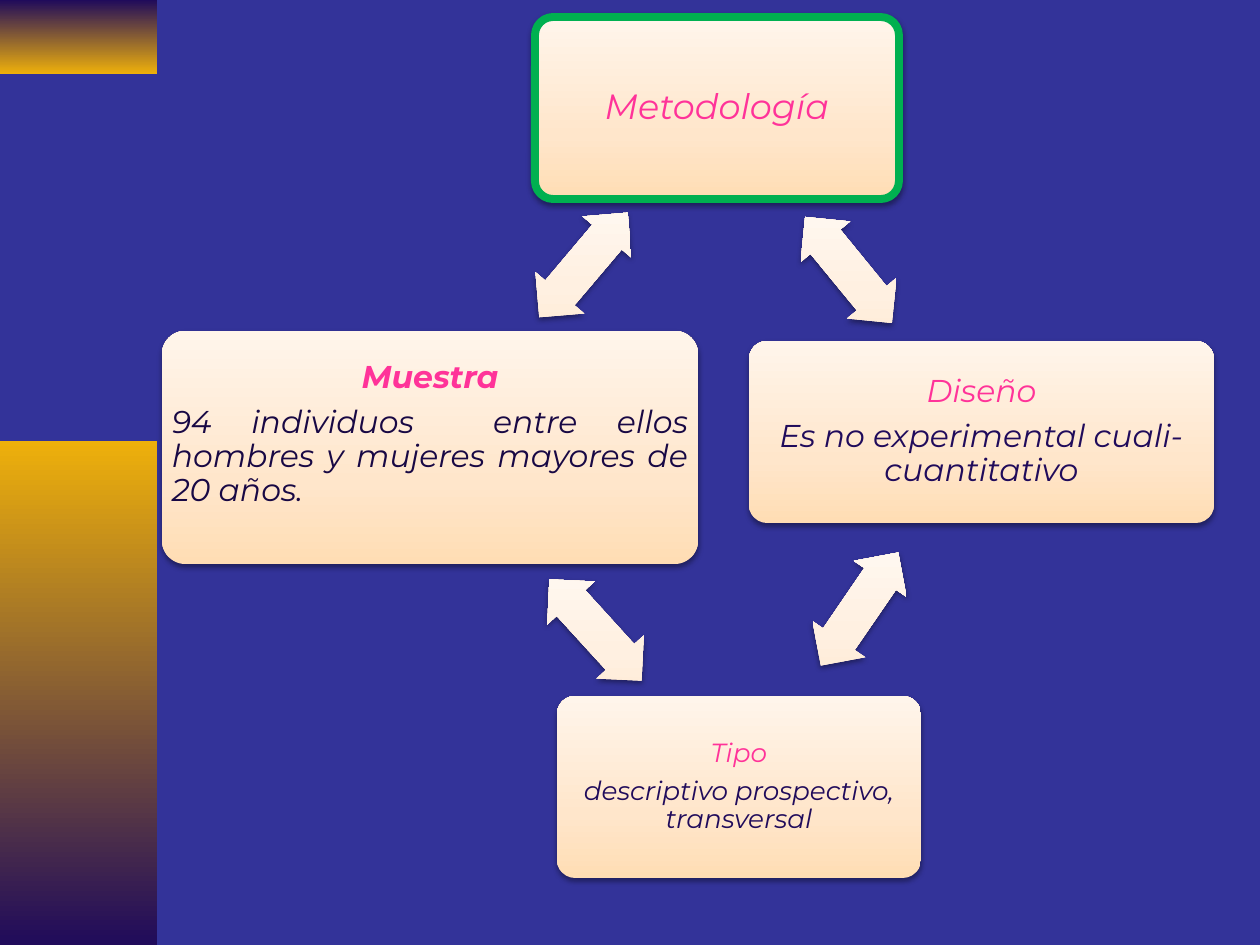
from lxml.etree import SubElement
from pptx import Presentation
from pptx.dml.color import RGBColor
from pptx.enum.shapes import MSO_SHAPE
from pptx.enum.text import MSO_ANCHOR, MSO_AUTO_SIZE, PP_ALIGN
from pptx.oxml.ns import qn
from pptx.util import Pt

EMU_PER_PX = 914400 / 126

BLUE = RGBColor(0x33, 0x33, 0x99)
PURPLE = RGBColor(0x20, 0x0B, 0x5B)
INK = RGBColor(0x18, 0x08, 0x44)
GOLD = RGBColor(0xEE, 0xB0, 0x0B)
PINK = RGBColor(0xFF, 0x33, 0x99)
GREEN = RGBColor(0x00, 0xB0, 0x50)
BLACK = RGBColor(0, 0, 0)
BOX_STOPS = [(0, RGBColor(0xFF, 0xDD, 0xB4)), (35, RGBColor(0xFF, 0xE6, 0xCB)),
             (100, RGBColor(0xFF, 0xF5, 0xEB))]
ARROW_STOPS = [(0, RGBColor(0xFF, 0xEB, 0xD5)), (35, RGBColor(0xFF, 0xF0, 0xE1)),
               (100, RGBColor(0xFF, 0xF9, 0xF3))]


def px(n):
    return int(n * EMU_PER_PX)


def add_text(tf, text, first=False, size=18, color=PURPLE, bold=False,
             align=PP_ALIGN.CENTER, font="Montserrat"):
    p = tf.paragraphs[0] if first else tf.add_paragraph()
    p.alignment = align
    p.line_spacing = 0.9
    p.space_after = Pt(round(size * 0.35, 1))
    r = p.add_run()
    r.text = text
    r.font.name = font
    r.font.size = Pt(size)
    r.font.bold = bold
    r.font.italic = True
    r.font.color.rgb = color


class Diagram:
    def __init__(self, slide):
        self.slide = slide

    def shape(self, kind, x, y, w, h, stops, angle):
        sp = self.slide.shapes.add_shape(kind, px(x), px(y), px(w), px(h))
        sp.shadow.inherit = False
        sp.line.fill.background()
        sp.fill.gradient()
        grad = sp._element.spPr.find(qn("a:gradFill"))
        grad.set("rotWithShape", "0")
        grad.find(qn("a:lin")).set("ang", str(angle * 60000))
        gs_list = grad.find(qn("a:gsLst"))
        for gs in list(gs_list):
            gs_list.remove(gs)
        for pos, color in stops:
            gs = SubElement(gs_list, qn("a:gs"), pos=str(pos * 1000))
            SubElement(gs, qn("a:srgbClr"), val=str(color))
        return sp

    def soft_shadow(self, sp):
        effects = sp._element.spPr.find(qn("a:effectLst"))
        shadow = SubElement(effects, qn("a:outerShdw"), blurRad="40000",
                            dist="20000", dir="5400000", rotWithShape="0")
        clr = SubElement(shadow, qn("a:srgbClr"), val=str(BLACK))
        SubElement(clr, qn("a:alpha"), val="38000")

    def bar(self, y, h, top, bottom):
        self.shape(MSO_SHAPE.RECTANGLE, 0, y, 157, h, [(0, top), (100, bottom)], 90)

    def box(self, x, y, w, h):
        sp = self.shape(MSO_SHAPE.ROUNDED_RECTANGLE, x, y, w, h, BOX_STOPS, 270)
        sp.adjustments[0] = 0.1
        self.soft_shadow(sp)
        return sp

    def frame(self, sp, inset, bottom=None):
        tf = sp.text_frame
        tf.word_wrap = True
        tf.auto_size = MSO_AUTO_SIZE.NONE
        tf.vertical_anchor = MSO_ANCHOR.MIDDLE
        tf.margin_left = tf.margin_right = tf.margin_top = px(inset)
        tf.margin_bottom = px(inset if bottom is None else bottom)
        return tf

    def topic(self, x, y, w, h, heading, body, size=18, bold=False,
              color=PURPLE, align=PP_ALIGN.CENTER, bottom=3):
        tf = self.frame(self.box(x, y, w, h), 3, bottom)
        add_text(tf, heading, first=True, size=size, color=PINK, bold=bold)
        add_text(tf, body, size=size, color=color, align=align)

    def title(self, x, y, w, h, text):
        sp = self.box(x, y, w, h)
        sp.line.color.rgb = GREEN
        sp.line.width = Pt(4.5)
        title = self.slide.shapes.title
        title.left, title.top, title.width, title.height = px(x), px(y), px(w), px(h)
        add_text(self.frame(title, 10), text, first=True, size=20, color=PINK)
        # Bring the title in front of its box
        sp._element.addnext(title._element)

    def arrow(self, x, y, rotation):
        sp = self.shape(MSO_SHAPE.LEFT_RIGHT_ARROW, x, y, 137, 64, ARROW_STOPS, 270)
        sp.adjustments[0] = 0.6
        sp.adjustments[1] = 0.5
        sp.rotation = rotation
        self.soft_shadow(sp)


def main():
    prs = Presentation()
    prs.slide_width, prs.slide_height = px(1260), px(945)
    s = prs.slides.add_slide(prs.slide_layouts[5])
    s.background.fill.solid()
    s.background.fill.fore_color.rgb = BLUE
    d = Diagram(s)

    # Side bars
    d.bar(0, 74, PURPLE, GOLD)
    d.bar(441, 504, GOLD, PURPLE)

    # Title and topics
    d.title(535, 17, 364, 182, "Metodología")
    d.topic(749, 341, 465, 182, "Diseño", "Es no experimental cuali-cuantitativo")
    d.topic(557, 696, 364, 182, "Tipo", "descriptivo prospectivo, transversal", size=15)
    d.topic(162, 331, 536, 233, "Muestra",
            "94 individuos  entre ellos hombres y mujeres mayores de 20 años.",
            bold=True, color=INK, align=PP_ALIGN.JUSTIFY, bottom=29)

    # Arrows around the cycle
    for x, y, rotation in [(780, 238, 50.7), (791, 577, 124.4),
                           (527, 598, 227.7), (515, 233, 310.2)]:
        d.arrow(x, y, rotation)

    prs.save("out.pptx")


if __name__ == "__main__":
    main()
